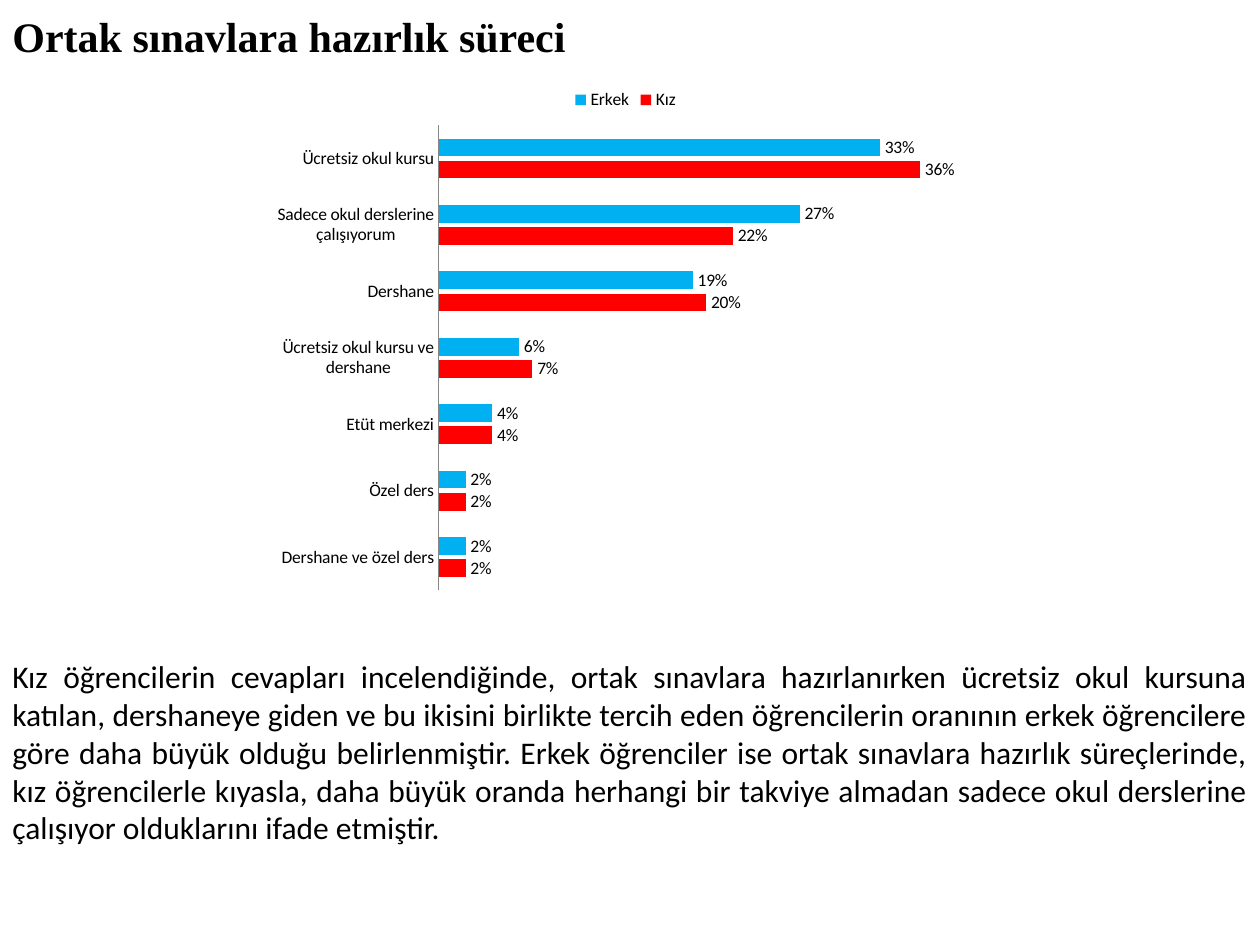
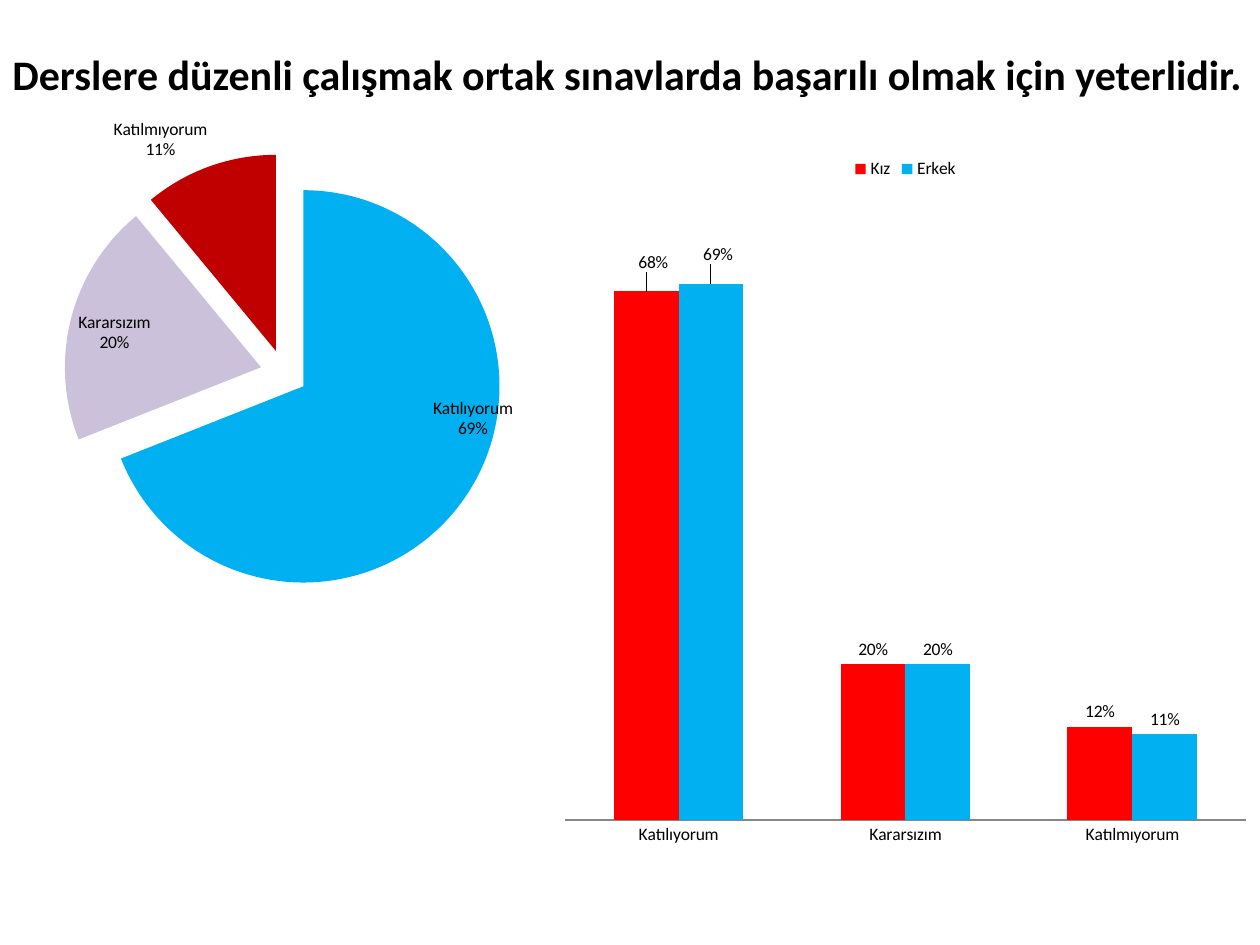
from copy import deepcopy
from dataclasses import dataclass

from lxml.etree import SubElement
from pptx import Presentation
from pptx.chart.data import CategoryChartData
from pptx.dml.color import RGBColor
from pptx.enum.chart import XL_CHART_TYPE, XL_LEGEND_POSITION, XL_TICK_LABEL_POSITION, XL_TICK_MARK
from pptx.enum.text import MSO_ANCHOR, MSO_AUTO_SIZE, PP_ALIGN
from pptx.oxml.ns import qn
from pptx.util import Emu, Pt

EMU_PER_PX = 914400 / 126
COLORS = {
    "text": "000000",
    "girls": "FF0000",
    "boys": "00B0F0",
    "agree": "00B0F0",
    "undecided": "CCC1DA",
    "disagree": "C00000",
    "axis": "868686",
}
BODY_FONT = "Calibri"
GIRLS, BOYS = "Kız", "Erkek"
SERIES_COLORS = {GIRLS: "girls", BOYS: "boys"}


@dataclass(frozen=True)
class Frame:
    left: int
    top: int
    width: int
    height: int

    def emu(self) -> tuple:
        return tuple(px(n) for n in (self.left, self.top, self.width, self.height))


@dataclass(frozen=True)
class TextStyle:
    size: int
    font: str = BODY_FONT
    bold: bool = False
    wrap: bool = True
    anchor: MSO_ANCHOR = MSO_ANCHOR.TOP
    align: PP_ALIGN = PP_ALIGN.LEFT


@dataclass(frozen=True)
class BarChart:
    frame: Frame
    kind: XL_CHART_TYPE
    categories: tuple
    series: dict
    overlap: int = 0


def px(length: int) -> Emu:
    return Emu(round(length * EMU_PER_PX))


def color(name: str) -> RGBColor:
    return RGBColor.from_string(COLORS[name])


def fill(target, name: str) -> None:
    target.format.fill.solid()
    target.format.fill.fore_color.rgb = color(name)


def add_text(page, frame: Frame, text: str, style: TextStyle) -> None:
    box = page.shapes.add_textbox(*frame.emu())
    text_frame = box.text_frame
    text_frame.text = text
    text_frame.word_wrap = style.wrap
    text_frame.auto_size = MSO_AUTO_SIZE.SHAPE_TO_FIT_TEXT
    text_frame.vertical_anchor = style.anchor
    para = text_frame.paragraphs[0]
    para.alignment = style.align
    font = para.runs[0].font
    font.name, font.size, font.bold = style.font, Pt(style.size), style.bold
    font.color.rgb = color("text")


def add_title(page, frame: Frame, text: str, font: str, wrap: bool) -> None:
    add_text(page, frame, text, TextStyle(24, font, True, wrap, MSO_ANCHOR.MIDDLE))


def add_chart(page, frame: Frame, kind: XL_CHART_TYPE, categories: tuple, series: dict, number_format: str):
    data = CategoryChartData(number_format=number_format)
    data.categories = categories
    for name, values in series.items():
        data.add_series(name, values)
    chart = page.shapes.add_chart(kind, *frame.emu(), data).chart
    chart.has_title = False
    chart.has_legend = False
    chart.font.name, chart.font.size = BODY_FONT, Pt(10)
    chart.font.color.rgb = color("text")
    return chart


def show_percent_labels(series):
    labels = series.data_labels
    labels.number_format, labels.number_format_is_linked = "0%", False
    labels.show_value = True
    return labels


def set_layout(layout, **values) -> None:
    manual = SubElement(layout, qn("c:manualLayout"))
    for tag, value in values.items():
        SubElement(manual, qn(f"c:{tag}")).set("val", str(value))


def shift_first_label(series, x: float, y: float) -> None:
    """Move the first point's label by fractions of the chart's size."""
    labels = series._element.find(qn("c:dLbls"))
    shared = [deepcopy(child) for child in labels if child.tag != qn("c:showLeaderLines")]
    label = SubElement(labels, qn("c:dLbl"))
    labels.insert(0, label)
    SubElement(label, qn("c:idx")).set("val", "0")
    set_layout(SubElement(label, qn("c:layout")), x=x, y=y)
    label.extend(shared)


def add_bar_chart(page, design: BarChart):
    chart = add_chart(page, design.frame, design.kind, design.categories, design.series, "0%")
    chart.has_legend = True
    chart.legend.position = XL_LEGEND_POSITION.TOP
    chart.legend.include_in_layout = False
    chart.value_axis.visible = False
    chart.value_axis.has_major_gridlines = False
    axis = chart.category_axis
    axis.major_tick_mark = axis.minor_tick_mark = XL_TICK_MARK.NONE
    axis.tick_label_position = XL_TICK_LABEL_POSITION.NEXT_TO_AXIS
    axis.format.line.color.rgb = color("axis")
    axis.format.line.width = Pt(0.75)
    plot = chart.plots[0]
    plot.vary_by_categories = False
    plot.gap_width, plot.overlap = 150, design.overlap
    for series in plot.series:
        fill(series, SERIES_COLORS[series.name])
        series.invert_if_negative = False
        show_percent_labels(series)
    return chart


def add_opinion_pie(page, frame: Frame, categories: tuple, values: tuple) -> None:
    chart = add_chart(page, frame, XL_CHART_TYPE.PIE, categories, {"Series 1": values}, "General")
    plot = chart.plots[0]
    plot.vary_by_categories = True
    series = plot.series[0]
    for index, name in enumerate(("agree", "undecided", "disagree")):
        fill(series.points[index], name)
    explosion = SubElement(series._element, qn("c:explosion"))
    explosion.set("val", "12")
    series._element.find(qn("c:tx")).addnext(explosion)

    labels = show_percent_labels(series)
    labels.show_value = False
    labels.show_category_name = labels.show_percentage = True
    label_xml = series._element.find(qn("c:dLbls"))
    separator = SubElement(label_xml, qn("c:separator"))
    separator.text = "\n"
    label_xml.find(qn("c:showPercent")).addnext(separator)
    bubble = label_xml.find(qn("c:showBubbleSize"))
    if bubble is not None:
        bubble.addnext(separator)
    shift_first_label(series, -0.06, -0.19)

    plot_area = chart._chartSpace.chart.plotArea
    layout = plot_area.find(qn("c:layout"))
    if layout is None:
        layout = SubElement(plot_area, qn("c:layout"))
        plot_area.insert(0, layout)
    set_layout(layout, layoutTarget="inner", xMode="edge", yMode="edge", x=0.11, y=0.07, w=0.89, h=0.82)


def build_preparation_page(page) -> None:
    add_title(page, Frame(0, 4, 583, 63), "Ortak sınavlara hazırlık süreci", "Times New Roman", False)
    add_bar_chart(page, BarChart(
        Frame(263, 76, 725, 525),
        XL_CHART_TYPE.BAR_CLUSTERED,
        ("Dershane ve özel ders", "Özel ders", "Etüt merkezi", "Ücretsiz okul kursu ve dershane",
         "Dershane", "Sadece okul derslerine çalışıyorum", "Ücretsiz okul kursu"),
        {GIRLS: (0.02, 0.02, 0.04, 0.07, 0.2, 0.22, 0.36),
         BOYS: (0.02, 0.02, 0.04, 0.06, 0.19, 0.27, 0.33)},
        overlap=-25,
    ))
    add_text(
        page, Frame(0, 651, 1260, 242),
        "Kız öğrencilerin cevapları incelendiğinde, ortak sınavlara hazırlanırken ücretsiz okul kursuna "
        "katılan, dershaneye giden ve bu ikisini birlikte tercih eden öğrencilerin oranının erkek "
        "öğrencilere göre daha büyük olduğu belirlenmiştir. Erkek öğrenciler ise ortak sınavlara hazırlık "
        "süreçlerinde, kız öğrencilerle kıyasla, daha büyük oranda herhangi bir takviye almadan sadece "
        "okul derslerine çalışıyor olduklarını ifade etmiştir.",
        TextStyle(18, align=PP_ALIGN.JUSTIFY),
    )


def build_opinion_page(page) -> None:
    opinions = ("Katılıyorum", "Kararsızım", "Katılmıyorum")
    add_title(page, Frame(0, 42, 1295, 63),
              "Derslere düzenli çalışmak ortak sınavlarda başarılı olmak için yeterlidir.", BODY_FONT, True)
    add_opinion_pie(page, Frame(-74, 116, 645, 536), opinions, (69, 20, 11))
    chart = add_bar_chart(page, BarChart(
        Frame(551, 145, 709, 714),
        XL_CHART_TYPE.COLUMN_CLUSTERED,
        opinions,
        {GIRLS: (0.68, 0.2, 0.12), BOYS: (0.69, 0.2, 0.11)},
    ))
    for series in chart.plots[0].series:
        shift_first_label(series, 0.01, -0.02)


def main() -> None:
    deck = Presentation()
    deck.slide_width, deck.slide_height = px(1260), px(945)
    for build_page in (build_preparation_page, build_opinion_page):
        build_page(deck.slides.add_slide(deck.slide_layouts[6]))
    deck.save("out.pptx")


if __name__ == "__main__":
    main()
